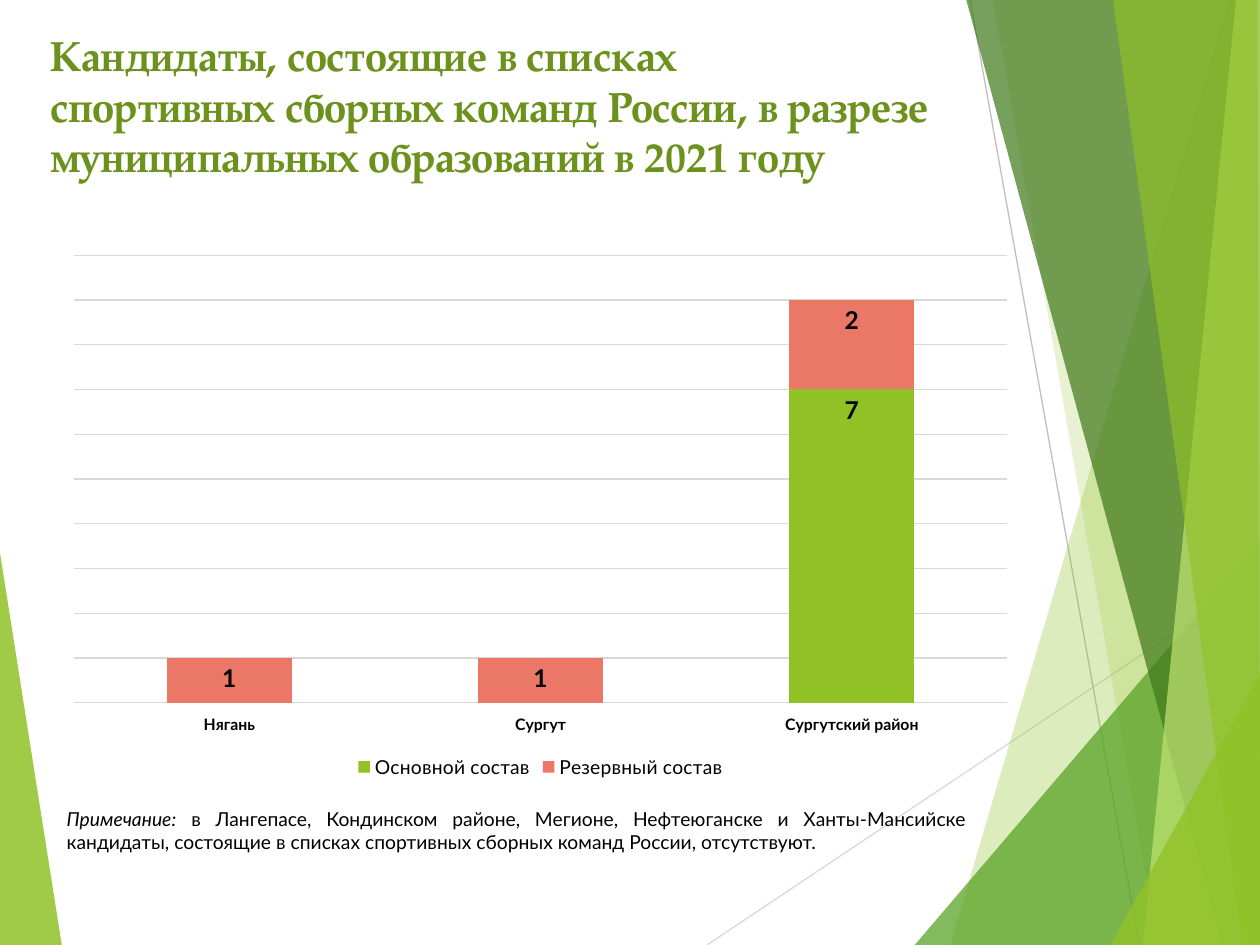
from dataclasses import dataclass

from lxml.etree import SubElement
from pptx import Presentation
from pptx.chart.data import CategoryChartData as ChartData
from pptx.dml.color import RGBColor
from pptx.enum.chart import XL_CHART_TYPE as Kind
from pptx.enum.chart import XL_LABEL_POSITION as Spot
from pptx.enum.chart import XL_LEGEND_POSITION as Side
from pptx.enum.chart import XL_TICK_LABEL_POSITION as Tick
from pptx.enum.chart import XL_TICK_MARK as Mark
from pptx.enum.shapes import MSO_CONNECTOR as Link
from pptx.enum.text import MSO_ANCHOR as Anchor
from pptx.enum.text import MSO_AUTO_SIZE as Fit
from pptx.enum.text import PP_ALIGN as Align
from pptx.oxml import parse_xml
from pptx.oxml.ns import nsdecls, qn
from pptx.util import Pt

LIME = RGBColor(0x90, 0xC2, 0x26)
GREEN = RGBColor(0x54, 0xA0, 0x21)
DARK = RGBColor(0x3F, 0x78, 0x19)
PALE = RGBColor(0xC0, 0xE4, 0x74)
OLIVE = RGBColor(0x6C, 0x92, 0x1D)
CORAL = RGBColor(0xEB, 0x77, 0x66)
BLACK = RGBColor(0, 0, 0)
SILVER = RGBColor(0xBF, 0xBF, 0xBF)
LIGHT = RGBColor(0xD9, 0xD9, 0xD9)
SANS, SERIF = "Lato", "TeX Gyre Pagella"
WIDE, HIGH = 720, 540


@dataclass
class Facet:
    points: list[tuple[float, float]]
    color: RGBColor
    alpha: int


@dataclass
class Ray:
    start: tuple[float, float]
    end: tuple[float, float]
    color: RGBColor


@dataclass
class Squad:
    name: str
    counts: list[int | None]
    color: RGBColor


RAYS = [
    Ray((404, HIGH), (WIDE, 329), LIGHT),
    Ray((554.4, 0), (651, HIGH), SILVER),
]
FACETS = [
    Facet([(0, 316), (35.3, HIGH), (0, HIGH)], LIME, 85),
    Facet([(702, 0), (543, HIGH), (WIDE, HIGH), (WIDE, 0)], LIME, 30),
    Facet([(567.4, 0), (661.7, HIGH), (WIDE, HIGH), (WIDE, 0)], LIME, 20),
    Facet([(522.7, HIGH), (WIDE, 309), (WIDE, HIGH)], GREEN, 72),
    Facet([(552.2, 0), (698.4, HIGH), (WIDE, HIGH), (WIDE, 0)], DARK, 70),
    Facet([(706.3, 0), (653, HIGH), (WIDE, HIGH), (WIDE, 0)], PALE, 70),
    Facet([(636, 0), (710, HIGH), (WIDE, HIGH), (718.6, 0)], LIME, 65),
    Facet([(634.5, HIGH), (WIDE, 385), (WIDE, HIGH)], LIME, 80),
]
TOWNS = ["Нягань", "Сургут", "Сургутский район"]
SQUADS = [
    Squad("Основной состав", [None, None, 7], LIME),
    Squad("Резервный состав", [1, 1, 2], CORAL),
]


def draw_ray(slide, ray: Ray) -> None:
    ends = [Pt(n) for n in ray.start + ray.end]
    line = slide.shapes.add_connector(Link.STRAIGHT, *ends)
    line.line.color.rgb = ray.color
    line.line.width = Pt(0.75)
    SubElement(line._element.spPr, qn("a:effectLst"))


def draw_facet(slide, facet: Facet) -> None:
    first, *rest = [(Pt(x), Pt(y)) for x, y in facet.points]
    pen = slide.shapes.build_freeform(*first)
    pen.add_line_segments(rest, close=True)
    shape = pen.convert_to_shape()
    shape.shadow.inherit = False
    shape.line.fill.background()
    shape.fill.solid()
    shape.fill.fore_color.rgb = facet.color
    tint = shape.fill._xPr.find(qn("a:solidFill"))[0]
    SubElement(tint, qn("a:alpha"), val=str(facet.alpha * 1000))


def style(font, size: float, *, face: str = SANS, color: RGBColor = BLACK,
          bold: bool = False, slant: bool = False) -> None:
    font.size, font.name = Pt(size), face
    font.bold, font.italic = bold, slant
    font.color.rgb = color


def add_text(slide, text: str, *, box: tuple, size: float, lead: str = "",
             align: Align = Align.LEFT, anchor: Anchor = Anchor.TOP,
             fit: Fit = Fit.NONE, **looks) -> None:
    frame = slide.shapes.add_textbox(*map(Pt, box)).text_frame
    frame.word_wrap = True
    frame.auto_size = fit
    frame.vertical_anchor = anchor
    para = frame.paragraphs[0]
    para.alignment = align
    if lead:
        run = para.add_run()
        run.text = lead
        style(run.font, size, slant=True, **looks)
    for row, part in enumerate(text.split("\n")):
        if row:
            para.add_line_break()
        run = para.add_run()
        run.text = part
        style(run.font, size, **looks)


def draw_line(form) -> None:
    form.line.color.rgb = LIGHT
    form.line.width = Pt(0.75)


def set_plot(chart, **area: float) -> None:
    parts = "".join(f'<c:{key} val="{val}"/>' for key, val in area.items())
    plot = chart._chartSpace.chart.plotArea
    for old in plot.findall(qn("c:layout")):
        plot.remove(old)
    plot.insert(0, parse_xml(
        f'<c:layout {nsdecls("c")}><c:manualLayout>'
        '<c:layoutTarget val="inner"/><c:xMode val="edge"/>'
        f'<c:yMode val="edge"/>{parts}</c:manualLayout></c:layout>'))


def add_graph(slide, squads: list[Squad], box: tuple) -> None:
    data = ChartData()
    data.categories = TOWNS
    for squad in squads:
        data.add_series(squad.name, squad.counts)
    chart = slide.shapes.add_chart(
        Kind.COLUMN_STACKED, *map(Pt, box), data).chart
    style(chart.font, 10)
    chart.has_title = False
    chart.has_legend = True
    chart.legend.position = Side.BOTTOM
    chart.legend.include_in_layout = False
    style(chart.legend.font, 11)
    towns, scale = chart.category_axis, chart.value_axis
    towns.major_tick_mark = Mark.NONE
    towns.tick_label_position = Tick.LOW
    style(towns.tick_labels.font, 9, bold=True)
    draw_line(towns.format)
    scale.visible = False
    scale.minimum_scale, scale.maximum_scale = 0, 10
    scale.major_unit = 1
    draw_line(scale.major_gridlines.format)
    plot = chart.plots[0]
    plot.gap_width, plot.overlap = 150, 100
    plot.vary_by_categories = False
    for bar, squad in zip(plot.series, squads):
        bar.format.fill.solid()
        bar.format.fill.fore_color.rgb = squad.color
        bar.invert_if_negative = False
        tags = bar.data_labels
        tags.show_value = True
        tags.position = Spot.INSIDE_END
        style(tags.font, 14, bold=True)
    set_plot(chart, x=0.02, y=0.02, w=0.96, h=0.83)


def main() -> None:
    deck = Presentation()
    deck.slide_width, deck.slide_height = Pt(WIDE), Pt(HIGH)
    slide = deck.slides.add_slide(deck.slide_layouts[6])
    draw_facet(slide, FACETS[0])
    for ray in RAYS:
        draw_ray(slide, ray)
    for facet in FACETS[1:]:
        draw_facet(slide, facet)
    add_text(slide, "Кандидаты, состоящие в списках\nспортивных сборных команд "
             "России, в разрезе муниципальных образований в 2021 году",
             box=(21.6, 15.1, 520, 90), size=24, face=SERIF, color=OLIVE,
             bold=True, anchor=Anchor.MIDDLE)
    add_graph(slide, SQUADS, (31, 139.7, 555.8, 308.2))
    add_text(slide, " в Лангепасе, Кондинском районе, Мегионе, Нефтеюганске и "
             "Ханты-Мансийске кандидаты, состоящие в списках спортивных "
             "сборных команд России, отсутствуют.", lead="Примечание:",
             box=(31, 457.9, 528.5, 33.8), size=11, align=Align.JUSTIFY,
             fit=Fit.SHAPE_TO_FIT_TEXT)
    deck.save("out.pptx")


if __name__ == "__main__":
    main()
